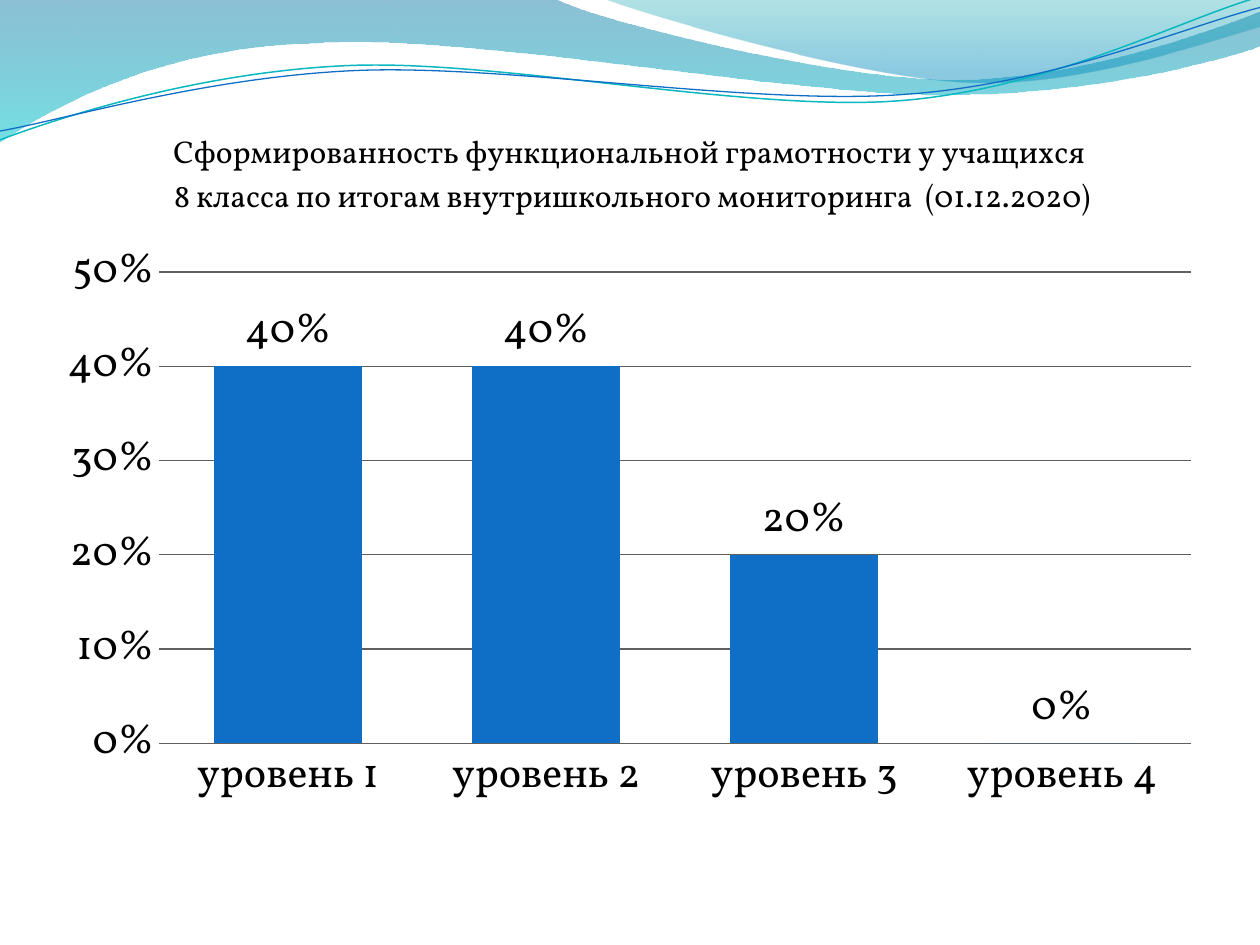
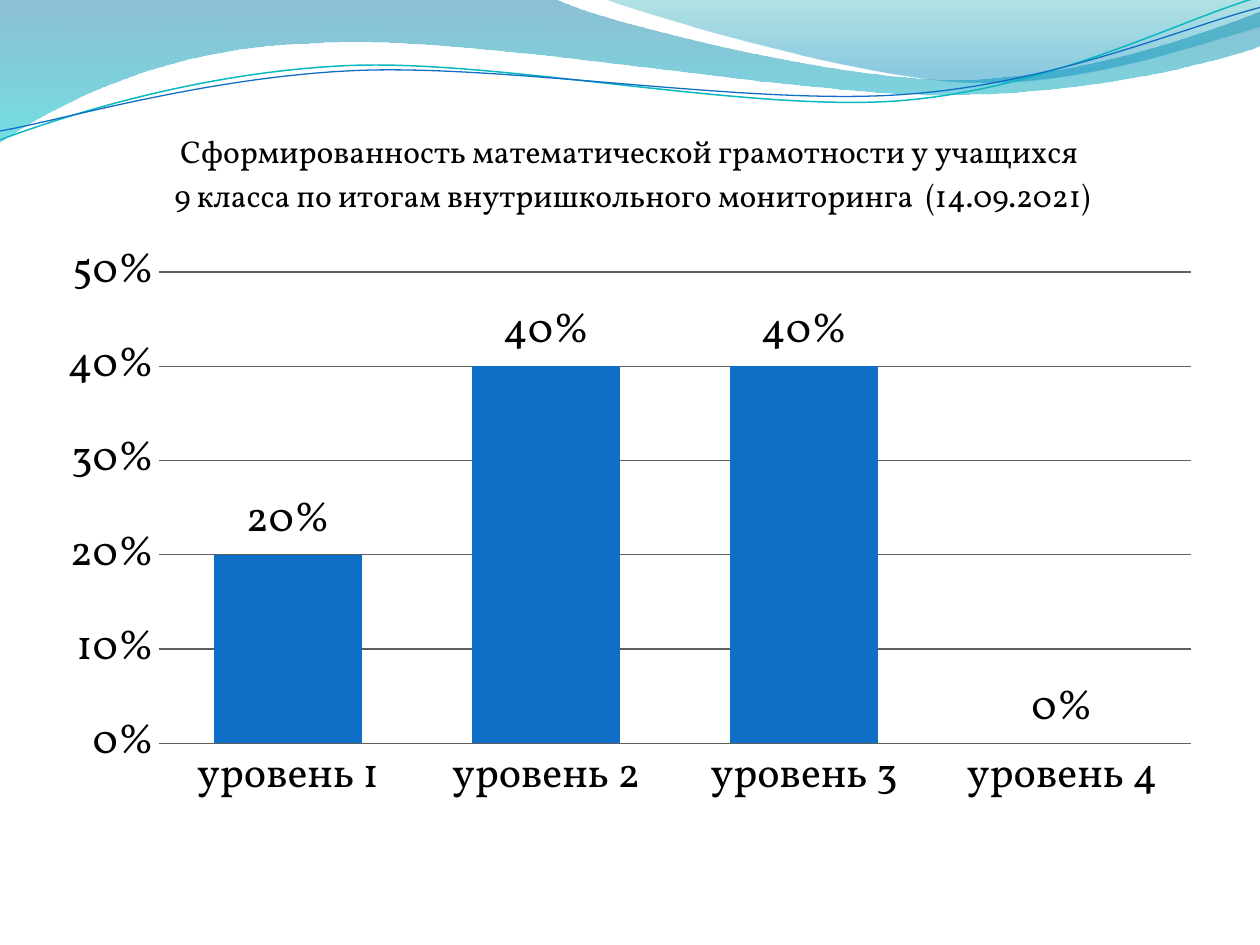
from math import cos, radians, sin

from lxml import etree
from pptx import Presentation
from pptx.chart.data import CategoryChartData
from pptx.dml.color import RGBColor
from pptx.enum.chart import XL_CHART_TYPE as ChartType
from pptx.enum.chart import XL_LABEL_POSITION as LabelPosition
from pptx.enum.chart import XL_TICK_MARK as TickMark
from pptx.oxml.ns import qn
from pptx.util import Inches, Pt

FONT = "Vollkorn"
COLORS = {
    "text": "000000", "grid": "5F5F5F", "bar": "0F6FC6",
    "blue_line": "0F6FC6", "teal_line": "0AB8BF",
    "deep_blue": "0074A1", "cyan": "00C6CF",
    "teal": "00A1A9", "sky": "008BBF",
}
LEVELS = [f"уровень {number}" for number in range(1, 5)]
CURVE_TILT = -2.7

# Each wave is a start point and segments: 2 numbers = line, 6 = Bezier curve
LEFT_WAVE = [
    (0, 0), (4.4, -0.01),
    (4.76, 0.17, 6.64, 0.63, 7.58, 0.63), (8.53, 0.63, 9.58, 0.26, 10, 0.09),
    (10.01, 0.36),
    (9.83, 0.44, 8.7, 0.76, 7.46, 0.75), (6.22, 0.75, 3.82, 0.28, 2.57, 0.34),
    (1.29, 0.36, 0.46, 0.83, -0.01, 1.13),
]
RIGHT_WAVE = [
    (4.79, -0.01),
    (5.09, 0.11, 6.82, 0.62, 7.69, 0.65), (8.56, 0.69, 9.61, 0.32, 10, 0.21),
    (10, 0),
]
TEAL_CURVE = [
    (0, 1.11),
    (0.48, 0.93, 1.58, 0.57, 2.77, 0.52), (3.95, 0.47, 5.93, 0.89, 7.13, 0.8),
    (8.33, 0.71, 9.38, 0.15, 9.98, -0.02),
]
BLUE_CURVE = [
    (0, 1.04),
    (0.47, 0.96, 1.64, 0.61, 2.83, 0.56), (4.03, 0.51, 5.97, 0.84, 7.17, 0.75),
    (8.36, 0.67, 9.41, 0.21, 10, 0.06),
]

# Title lines and level shares of each slide
RESULTS = [
    ("Сформированность функциональной грамотности у учащихся\n"
     " 8 класса по итогам внутришкольного мониторинга  (01.12.2020)",
     (0.4, 0.4, 0.2, 0)),
    ("Сформированность математической грамотности у учащихся\n"
     " 9 класса по итогам внутришкольного мониторинга  (14.09.2021)",
     (0.2, 0.4, 0.4, 0)),
]


def color(name):
    return RGBColor.from_string(COLORS[name])


def style_font(font, size):
    font.name = FONT
    font.size = Pt(size)
    font.bold = False
    font.color.rgb = color("text")


def style_line(line, name, width):
    line.color.rgb = color(name)
    line.width = Pt(width)


def turn(segment, pivot, degrees):
    """Rotate the points of a segment around the pivot."""
    angle = radians(degrees)
    turned = []
    for x, y in zip(segment[::2], segment[1::2]):
        dx, dy = x - pivot[0], y - pivot[1]
        turned += [pivot[0] + dx * cos(angle) - dy * sin(angle),
                   pivot[1] + dx * sin(angle) + dy * cos(angle)]
    return turned


def bend(outline, segments):
    """Join each three line steps of a curved segment into one Bezier curve."""
    steps = list(outline._element.iter(qn("a:lnTo")))
    for segment in segments[1:]:
        count = len(segment) // 2
        used, steps = steps[:count], steps[count:]
        if count == 3:
            curve = etree.Element(qn("a:cubicBezTo"))
            used[0].addprevious(curve)
            for step in used:
                curve.append(step[0])
                step.getparent().remove(step)


def add_outline(page, segments, close):
    points = [(Inches(x), Inches(y)) for segment in segments
              for x, y in zip(segment[::2], segment[1::2])]
    builder = page.shapes.build_freeform(*points[0])
    builder.add_line_segments(points[1:], close=close)
    outline = builder.convert_to_shape()
    bend(outline, segments)
    outline.shadow.inherit = False
    return outline


def add_wave(page, segments, stops):
    """Add a filled wave; stops are (position, colour, opacity percent)."""
    wave = add_outline(page, segments, close=True)
    wave.line.fill.background()
    wave.fill.gradient()
    wave.fill.gradient_angle = 270
    for stop, (position, name, _) in zip(wave.fill.gradient_stops, stops):
        stop.position = position
        stop.color.rgb = color(name)
    tints = wave._element.spPr.iter(qn("a:srgbClr"))
    for tint, (_, _, opacity) in zip(tints, stops):
        etree.SubElement(tint, qn("a:alpha"), val=str(opacity * 1000))


def add_curve(page, segments, pivot, name, width):
    """Add a thin curve that is laid level and then tilted as a shape."""
    level = [turn(segment, pivot, -CURVE_TILT) for segment in segments]
    curve = add_outline(page, level, close=False)
    curve.rotation = CURVE_TILT
    curve.fill.background()
    style_line(curve.line, name, width)


def move_to_layout(page, layout):
    """Make the shapes of the page part of its layout."""
    for placeholder in list(layout.placeholders):
        layout.shapes._spTree.remove(placeholder._element)
    for shape in list(page.shapes):
        layout.shapes._spTree.append(shape._element)


def draw_header(page, layout):
    add_wave(page, LEFT_WAVE, [(0, "deep_blue", 45), (1, "cyan", 55)])
    add_wave(page, RIGHT_WAVE, [(0, "teal", 30), (0.8, "sky", 45)])
    add_curve(page, TEAL_CURVE, (4.99, 0.58), "teal_line", 0.85)
    add_curve(page, BLUE_CURVE, (5, 0.59), "blue_line", 0.75)
    move_to_layout(page, layout)


def style_axis(axis):
    axis.major_tick_mark = axis.minor_tick_mark = TickMark.NONE
    style_font(axis.tick_labels.font, 24)


def add_level_chart(page, title, shares):
    data = CategoryChartData(number_format="0%")
    data.categories = LEVELS
    data.add_series("Series 1", shares)
    frame = page.shapes.add_chart(
        ChartType.COLUMN_CLUSTERED,
        Inches(0.35), Inches(0.84), Inches(9.29), Inches(5.67), data)
    chart = frame.chart
    style_font(chart.font, 10)
    chart.has_legend = False

    # Title
    chart.has_title = True
    chart.chart_title.include_in_layout = False
    chart.chart_title.text_frame.text = title
    for para in chart.chart_title.text_frame.paragraphs:
        style_font(para.font, 18)
        for span in para.runs:
            style_font(span.font, 18)

    # Axes
    style_axis(chart.category_axis)
    style_line(chart.category_axis.format.line, "grid", 0.75)
    values = chart.value_axis
    style_axis(values)
    values.minimum_scale, values.maximum_scale, values.major_unit = 0, 0.5, 0.1
    values.format.line.fill.background()
    values.tick_labels.number_format = "0%"
    values.tick_labels.number_format_is_linked = False
    style_line(values.major_gridlines.format.line, "grid", 0.75)

    # Bars and their labels
    plot = chart.plots[0]
    plot.gap_width, plot.overlap = 75, -25
    plot.vary_by_categories = False
    bars = plot.series[0]
    bars.format.fill.solid()
    bars.format.fill.fore_color.rgb = color("bar")
    labels = bars.data_labels
    labels.show_value = True
    labels.position = LabelPosition.OUTSIDE_END
    labels.number_format = "0%"
    labels.number_format_is_linked = False
    style_font(labels.font, 24)


def main():
    deck = Presentation()
    deck.slide_width, deck.slide_height = Inches(10), Inches(7.5)
    blank = deck.slide_layouts[6]
    pages = [deck.slides.add_slide(blank) for _ in RESULTS]
    draw_header(pages[0], blank)
    for page, (title, shares) in zip(pages, RESULTS):
        add_level_chart(page, title, shares)
    deck.save("out.pptx")


if __name__ == "__main__":
    main()
